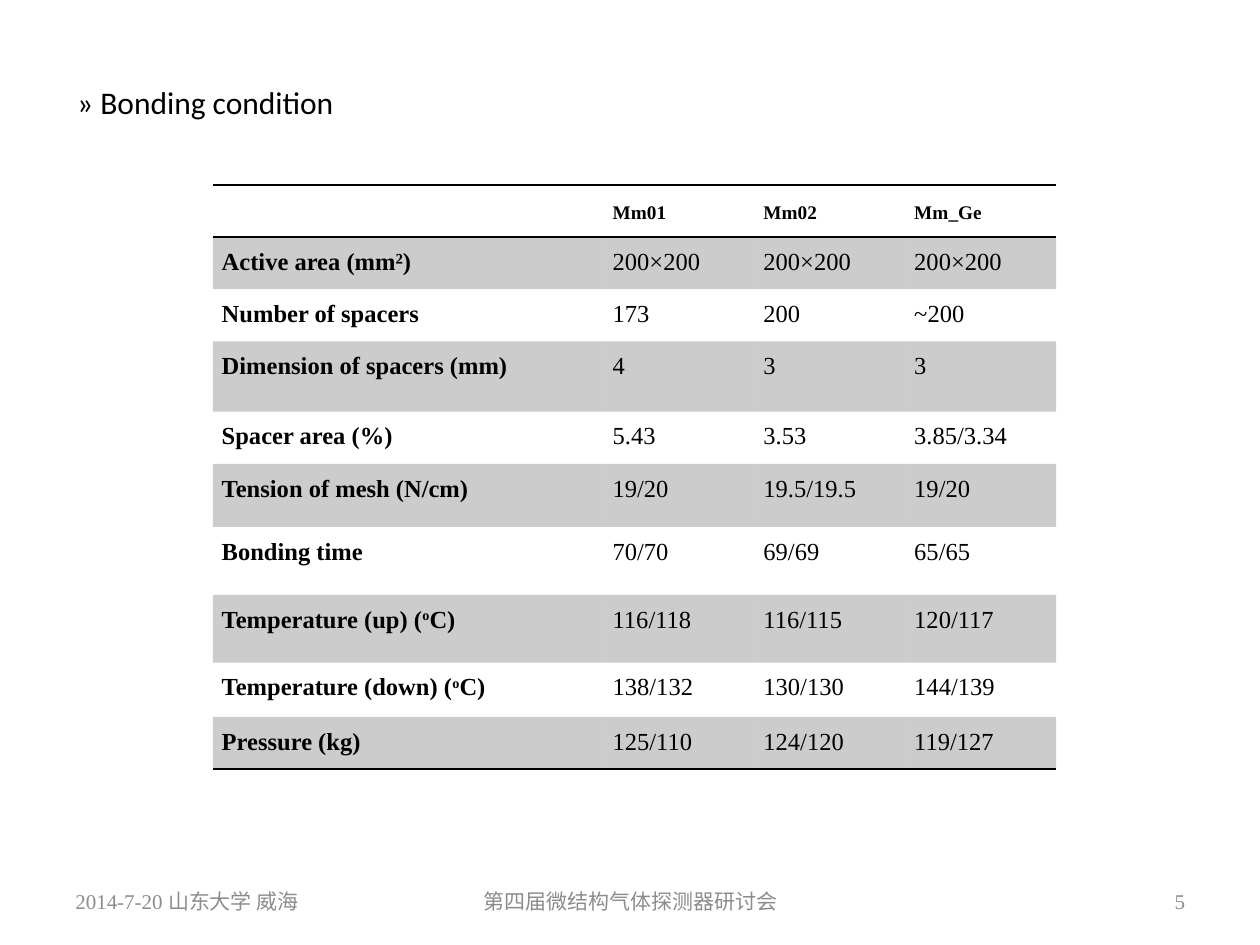
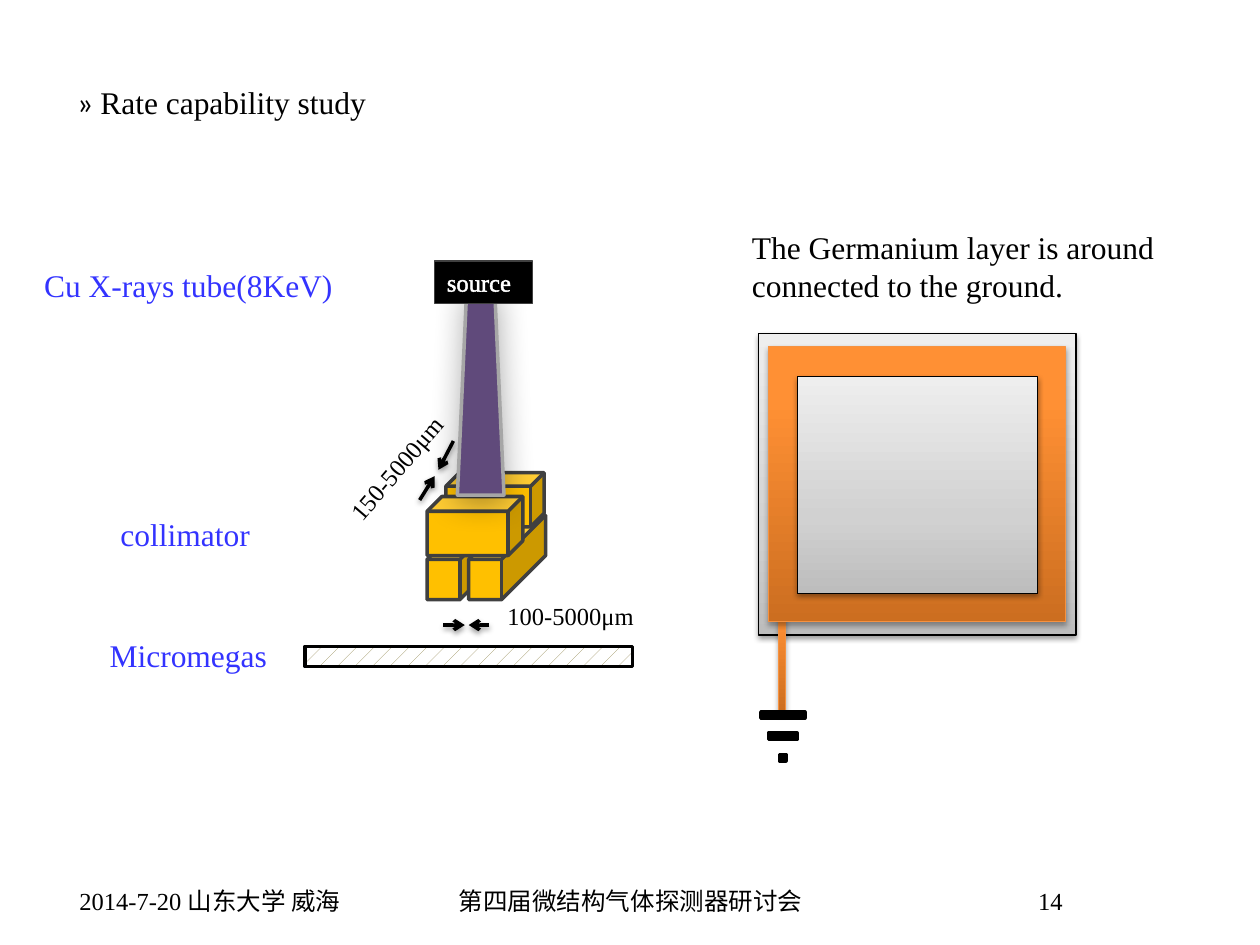
from pptx import Presentation
from pptx import util as u
from pptx.dml.color import RGBColor
from pptx.enum import dml, shapes, text
from pptx.oxml import parse_xml
from pptx.oxml.ns import nsdecls, qn

Cm, Pt = u.Cm, u.Pt
BLACK = RGBColor(0, 0, 0)
WHITE = RGBColor(255, 255, 255)
GREY = RGBColor(0x8C, 0x8C, 0x8C)
DARK = RGBColor(0x40, 0x40, 0x40)
SILVER = RGBColor(0xA6, 0xA6, 0xA6)
BLUE = RGBColor(0x33, 0x33, 0xFF)
GOLD = RGBColor(0xFF, 0xC0, 0)
VIOLET = RGBColor(0x60, 0x4A, 0x7B)
AMBER = RGBColor(0xF6, 0x92, 0x40)
KHAKI = RGBColor(0x94, 0x8A, 0x54)
STEEL = [(0, "BDBDBD"), (35, "D1D1D1"), (100, "EEEEEE")]
COPPER = [(0, "CC6E20"), (80, "FF9034"), (100, "FF9136")]
SERIF, SANS = "Times New Roman", "Calibri"
LEFT, MID, RIGHT = text.PP_ALIGN.LEFT, text.PP_ALIGN.CENTER, text.PP_ALIGN.RIGHT
TOP, CENTER = text.MSO_ANCHOR.TOP, text.MSO_ANCHOR.MIDDLE
KIND = shapes.MSO_SHAPE
SOFT = (38, 3.1, 1.6, 90)
WARM = (35, 3.1, 1.8, 90)
BEAM = (33, 17.8, 4, 87)
PLAIN_GRID = "{2D5ABB26-0587-4C30-8999-92F81FD0307C}"

HEADS = ["", "Mm01", "Mm02", "Mm_Ge"]
ROWS = [
    ("Active area (mm²)", "200×200", "200×200", "200×200"),
    ("Number of spacers", "173", "200", "~200"),
    ("Dimension of spacers (mm)", "4", "3", "3"),
    ("Spacer area (%)", "5.43", "3.53", "3.85/3.34"),
    ("Tension of mesh (N/cm)", "19/20", "19.5/19.5", "19/20"),
    ("Bonding time", "70/70", "69/69", "65/65"),
    ("Temperature (up) (^o^C)", "116/118", "116/115", "120/117"),
    ("Temperature (down) (^o^C)", "138/132", "130/130", "144/139"),
    ("Pressure (kg)", "125/110", "124/120", "119/127"),
]
HEIGHTS = [1.05, 1.05, 1.05, 1.42, 1.05, 1.27, 1.37, 1.37, 1.09, 1.05]
WIDTHS = [7.88, 3.04, 3.04, 3.04]


def xml(tag, attrs="", inner=""):
    return parse_xml(f'<a:{tag} {nsdecls("a")} {attrs}>{inner}</a:{tag}>')


def add_run(para, words, size=18, face=SERIF, color=BLACK, bold=False):
    for i, part in enumerate(words.split("^")):
        run = para.add_run()
        run.text = part
        font = run.font
        font.size, font.name, font.bold = Pt(size), face, bold
        font.color.rgb = color
        if i % 2:
            font._element.set("baseline", "30000")


def write(frame, words, align=LEFT, anchor=TOP, space=None, **font):
    frame.word_wrap = True
    frame.vertical_anchor = anchor
    for i, line in enumerate(words.split("\n")):
        para = frame.add_paragraph() if i else frame.paragraphs[0]
        para.alignment = align
        if space:
            para.line_spacing = Pt(space)
        if line:
            add_run(para, line, **font)


def label(slide, box, words, turn=0, **form):
    item = slide.shapes.add_textbox(*map(Cm, box))
    item.rotation = turn
    write(item.text_frame, words, **form)


def title(slide, words, face):
    item = slide.shapes.title
    item.left, item.top, item.width, item.height = map(Cm, (1.3, 1.55, 9.2, 1.02))
    frame = item.text_frame
    frame.auto_size = text.MSO_AUTO_SIZE.NONE
    write(frame, "» ", face=SANS)
    add_run(frame.paragraphs[0], words, face=face)


def footer(slide, page, aligns, **font):
    parts = ["2014-7-20 山东大学 威海", "第四届微结构气体探测器研讨会", page]
    spans = [(1.27, 5.93), (8.69, 8.05), (18.21, 5.93)]
    for words, (x, w), align in zip(parts, spans, aligns):
        label(slide, (x, 17.65, w, 1.02), words, align=align, anchor=CENTER, **font)


def shade(item, cast=None):
    props = item._element.spPr
    for old in props.findall(qn("a:effectLst")):
        props.remove(old)
    inner = ""
    if cast:
        alpha, blur, dist, angle = cast
        inner = (f'<a:outerShdw blurRad="{Pt(blur)}" dist="{Pt(dist)}" dir="{angle * 60000}" rotWithShape="0">'
                 f'<a:srgbClr val="{BLACK}"><a:alpha val="{alpha * 1000}"/></a:srgbClr></a:outerShdw>')
    props.append(xml("effectLst", inner=inner))


def blend(fill, item, stops):
    fill.gradient()
    fill.gradient_angle = 90
    chain = item._element.spPr.find(".//" + qn("a:gsLst"))
    for old in list(chain):
        chain.remove(old)
    for place, tone in stops:
        chain.append(xml("gs", f'pos="{place * 1000}"', f'<a:srgbClr val="{tone}"/>'))


def block(slide, box, fill, line=BLACK, width=2, kind=KIND.RECTANGLE, cast=None):
    item = slide.shapes.add_shape(kind, *map(Cm, box))
    if isinstance(fill, list):
        blend(item.fill, item, fill)
    else:
        item.fill.solid()
        item.fill.fore_color.rgb = fill
    item.line.color.rgb = line
    item.line.width = Pt(width)
    shade(item, cast)
    return item


def arrow(slide, start, end):
    item = slide.shapes.add_connector(shapes.MSO_CONNECTOR.STRAIGHT, *map(Cm, start + end))
    item.line.color.rgb = BLACK
    item.line.width = Pt(2)
    item.line._get_or_add_ln().append(xml("tailEnd", 'type="arrow"'))
    shade(item, SOFT)


def rule(cell, side):
    inner = f'<a:solidFill><a:srgbClr val="{BLACK}"/></a:solidFill>'
    cell._tc.get_or_add_tcPr().insert(0, xml(side, f'w="{Pt(1)}"', inner))


def fill_cell(cell, words, row, col):
    cell.margin_left = cell.margin_right = Cm(0.18)
    cell.margin_top = cell.margin_bottom = 0
    write(cell.text_frame, words, space=22, size=14 if row else 11, bold=row == 0 or col == 0)
    if row % 2:
        cell.fill.solid()
        cell.fill.fore_color.rgb = BLACK
        tone = cell._tc.tcPr.find(".//" + qn("a:srgbClr"))
        tone.append(xml("alpha", 'val="20000"'))
    else:
        cell.fill.background()
    if row in (0, len(ROWS)):
        rule(cell, "lnB")
    if row == 0:
        rule(cell, "lnT")


def grid(slide):
    data = [HEADS] + ROWS
    box = (4.29, 3.73, sum(WIDTHS), sum(HEIGHTS))
    table = slide.shapes.add_table(len(data), len(HEADS), *map(Cm, box)).table
    table._tbl.tblPr.find(qn("a:tableStyleId")).text = PLAIN_GRID
    table.first_row = table.horz_banding = False
    for col, width in zip(table.columns, WIDTHS):
        col.width = Cm(width)
    for r, (line, height) in enumerate(zip(data, HEIGHTS)):
        table.rows[r].height = Cm(height)
        for c, words in enumerate(line):
            fill_cell(table.cell(r, c), words, r, c)


def setup(slide):
    for x in (8.61, 9.45):
        cube = block(slide, (x, 10.39, 1.55, 1.7), GOLD, DARK, kind=KIND.CUBE)
        cube.adjustments[0] = 0.574
    for box in ((8.99, 9.53, 1.98, 1.09), (8.61, 10.01, 1.93, 1.19)):
        block(slide, box, GOLD, DARK, kind=KIND.CUBE)
    beam = block(slide, (9.22, 5.84, 0.94, 4.14), VIOLET, SILVER,
                 kind=KIND.FLOWCHART_MANUAL_OPERATION, cast=BEAM)
    beam.rotation = 180
    source = block(slide, (8.76, 5.26, 1.98, 0.86), BLACK, DARK, 0.75)
    write(source.text_frame, "source", size=14, color=WHITE)
    edge = f'<a:solidFill><a:srgbClr val="{WHITE}"/></a:solidFill>'
    run = source.text_frame.paragraphs[0].runs[0]
    run.font._element.insert(0, xml("ln", f'w="{Pt(1.45)}"', edge))
    arrow(slide, (8.46, 10.08), (8.76, 9.6))
    arrow(slide, (9.14, 8.89), (8.84, 9.47))
    arrow(slide, (8.94, 12.6), (9.37, 12.6))
    arrow(slide, (9.86, 12.6), (9.45, 12.6))
    label(slide, (6.45, 8.97, 3.15, 0.86), "150-5000μm", turn=310.5, size=14)
    label(slide, (9.98, 11.99, 3.2, 0.86), "100-5000μm", size=14)
    plate = block(slide, (6.15, 13.03, 6.6, 0.41), WHITE)
    plate.fill.patterned()
    plate.fill.pattern = dml.MSO_PATTERN.PERCENT_5
    plate.fill.fore_color.rgb, plate.fill.back_color.rgb = KHAKI, WHITE
    for x, y, w, words in ((0.64, 5.23, 7.34, "Cu X-rays tube(8KeV)"),
                           (2.18, 10.26, 4.19, "collimator"),
                           (1.96, 12.7, 4.19, "Micromegas")):
        label(slide, (x, y, w, 1.02), words, color=BLUE)


def layer(slide):
    block(slide, (15.29, 6.73, 6.4, 6.07), STEEL, width=0.75, cast=SOFT)
    for box in ((15.7, 11.96, 0.13, 2.39), (15.49, 6.99, 5.99, 5.54)):
        block(slide, box, COPPER, AMBER, 0.75, cast=WARM)
    block(slide, (16.08, 7.59, 4.83, 4.37), STEEL, width=0.75, cast=SOFT)
    for i, w in enumerate((0.89, 0.58, 0.13)):
        block(slide, (15.78 - w / 2, 14.35 + 0.43 * i, w, 0.13), BLACK)
    label(slide, (14.91, 4.47, 8.99, 1.8),
          "The Germanium layer is around\nconnected to the ground.")


def main():
    deck = Presentation()
    deck.slide_width, deck.slide_height = Cm(25.4), Cm(19.05)
    bond, rate = (deck.slides.add_slide(deck.slide_layouts[5]) for _ in range(2))
    title(bond, "Bonding condition", SANS)
    grid(bond)
    footer(bond, "5", (LEFT, MID, RIGHT), size=12, color=GREY)
    title(rate, "Rate capability study", SERIF)
    setup(rate)
    layer(rate)
    footer(rate, "14", (MID, MID, MID), size=14)
    deck.save("out.pptx")


if __name__ == "__main__":
    main()
